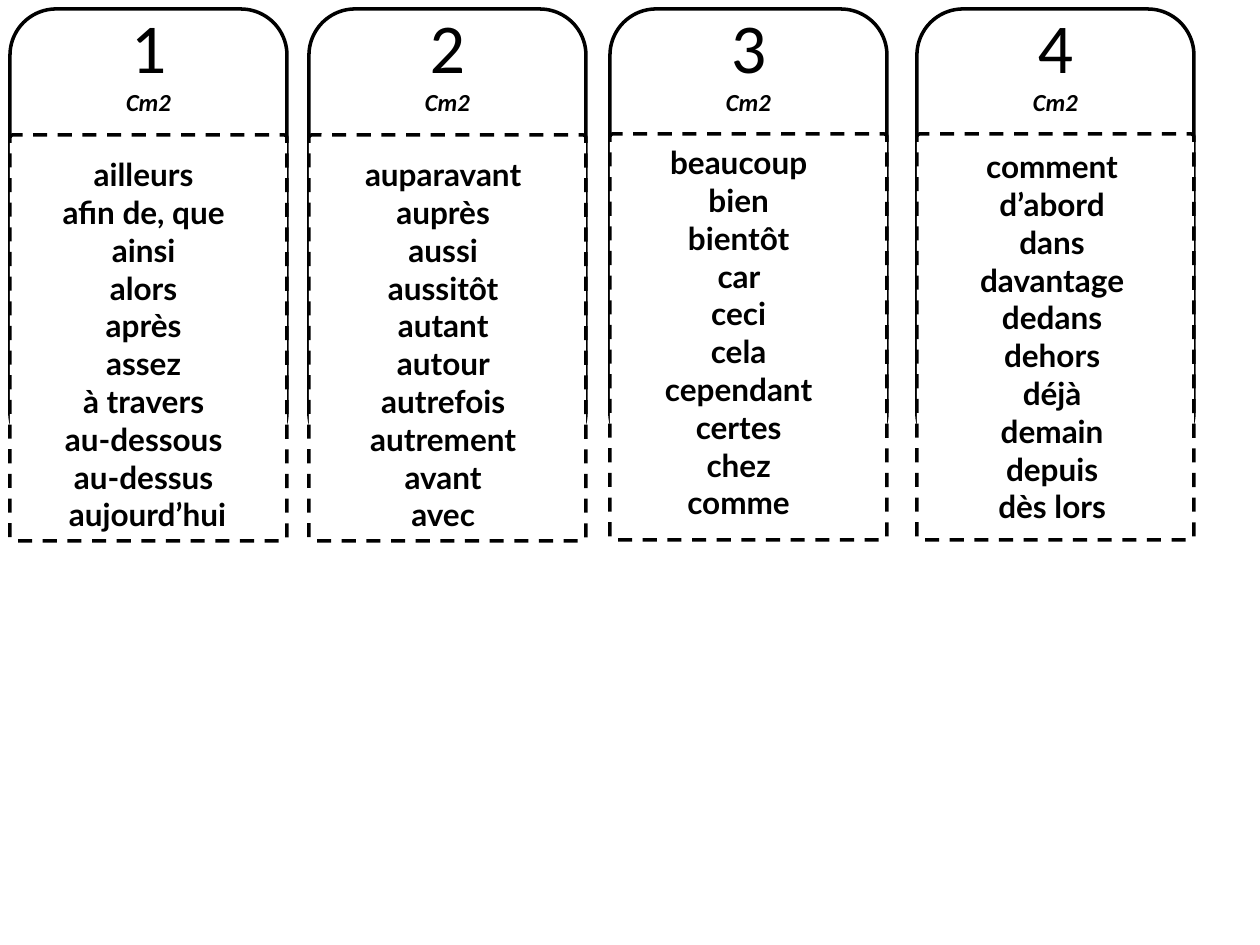
from pptx import Presentation
from pptx.dml.color import RGBColor
from pptx.enum.dml import MSO_LINE
from pptx.enum.shapes import MSO_SHAPE
from pptx.enum.text import MSO_ANCHOR, PP_ALIGN
from pptx.util import Pt

PX = 914400 // 126
CENTER = PP_ALIGN.CENTER
MIDDLE = MSO_ANCHOR.MIDDLE
DASH = MSO_LINE.DASH
ROUNDED = MSO_SHAPE.ROUNDED_RECTANGLE
COLORS = {"ink": "000000", "paper": "FFFFFF"}
CARD_WIDTH, CARD_TOP, CARD_HEIGHT = 277, 9, 450
SHEET_HEIGHT, WORDS_HEIGHT = 406, 394

COLUMNS = [
    (10, 135, (40, 149, 215),
     ["ailleurs ", "afin de, que ", "ainsi ", "alors ", "après ", "assez ",
      "à travers ", "au-dessous ", "au-dessus ", "aujourd’hui"]),
    (309, 135, (329, 149, 236),
     ["auparavant ", "auprès ", "aussi ", "aussitôt ", "autant ", "autour ",
      "autrefois ", "autrement ", "avant ", "avec "]),
    (610, 134, (617, 137, 251),
     ["beaucoup ", "bien ", "bientôt ", "car ", "ceci ", "cela ",
      "cependant ", "certes ", "chez ", "comme "]),
    (917, 134, (942, 141, 228),
     ["comment ", "d’abord ", "dans ", "davantage ", "dedans ", "dehors ",
      "déjà ", "demain ", "depuis ", "dès lors "]),
]

prs = Presentation()
prs.slide_width, prs.slide_height = 1260 * PX, 945 * PX
slide = prs.slides.add_slide(prs.slide_layouts[6])


def add_frame(left, top, height):
    frame = slide.shapes.add_shape(
        ROUNDED, left * PX, top * PX, CARD_WIDTH * PX, height * PX)
    frame.shadow.inherit = False
    frame.line.color.rgb = RGBColor.from_string(COLORS["ink"])
    frame.line.width = Pt(2)
    return frame


def write_lines(text_frame, lines, font_name):
    text_frame.word_wrap = True
    for index, (text, size, bold, italic) in enumerate(lines):
        paragraph = text_frame.paragraphs[0] if index == 0 else text_frame.add_paragraph()
        paragraph.alignment = CENTER
        run = paragraph.add_run()
        run.text = text
        run.font.name = font_name
        run.font.size = Pt(size)
        run.font.bold = bold
        run.font.italic = italic
        run.font.color.rgb = RGBColor.from_string(COLORS["ink"])


for number, (left, sheet_top, words_place, words) in enumerate(COLUMNS, 1):
    card = add_frame(left, CARD_TOP, CARD_HEIGHT)
    card.fill.background()
    heading = card.text_frame
    heading.vertical_anchor = MIDDLE
    heading.margin_top = 0
    heading.margin_bottom = 348 * PX
    write_lines(heading, [(str(number), 40, False, False), ("Cm2", 14, True, True)], "Calibri")

    sheet = add_frame(left, sheet_top, SHEET_HEIGHT)
    sheet.adjustments[0] = 0.01
    sheet.fill.solid()
    sheet.fill.fore_color.rgb = RGBColor.from_string(COLORS["paper"])
    sheet.line.dash_style = DASH

    words_left, words_top, words_width = words_place
    word_list = slide.shapes.add_textbox(
        words_left * PX, words_top * PX, words_width * PX, WORDS_HEIGHT * PX)
    write_lines(word_list.text_frame, [(word, 18, True, False) for word in words], "Lato")

prs.save("out.pptx")
